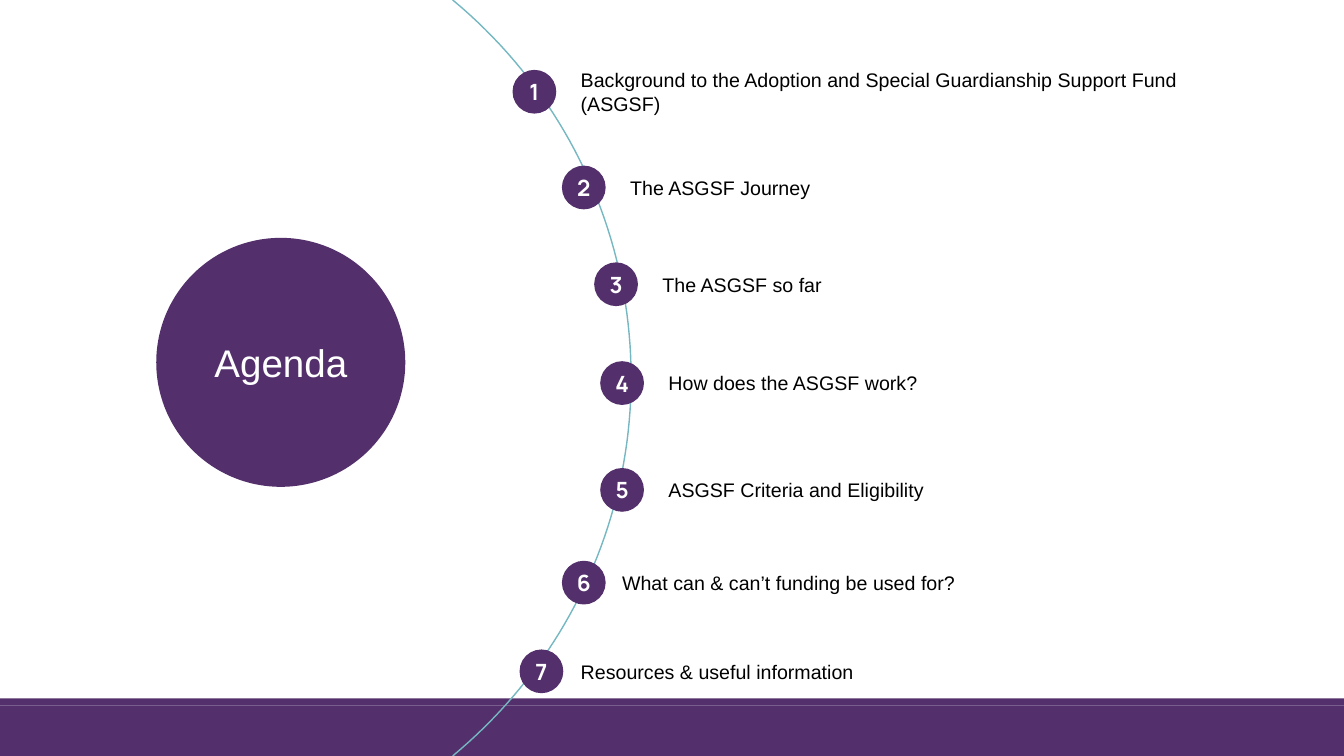
from lxml import etree
from pptx import Presentation
from pptx.dml.color import RGBColor
from pptx.enum.shapes import MSO_SHAPE
from pptx.enum.text import MSO_ANCHOR, PP_ALIGN
from pptx.oxml.ns import qn
from pptx.util import Inches, Pt

RECT, OVAL = MSO_SHAPE.RECTANGLE, MSO_SHAPE.OVAL
MIDDLE = MSO_ANCHOR.MIDDLE
LEFT, CENTER = PP_ALIGN.LEFT, PP_ALIGN.CENTER
PURPLE = RGBColor(0x53, 0x2F, 0x6B)
TEAL = RGBColor(0x75, 0xB8, 0xC2)
WHITE = RGBColor(0xFF, 0xFF, 0xFF)
BLACK = RGBColor(0, 0, 0)

BADGE = 0.42
LINE_HEIGHT = 0.24
ARC = [(4.49, 0), (5.61, 0.93), (6.26, 2.3), (6.26, 3.75)]
ARC_STEPS = 40
SLIDE_HEIGHT = 7.5

# badge left, badge top, label left, label width, label lines, label
AGENDA = [
    (5.09, 0.7, 5.76, 6.63, 2,
     "Background to the Adoption and Special Guardianship Support Fund (ASGSF)"),
    (5.58, 1.65, 6.25, 6.1, 1, "The ASGSF Journey"),
    (5.9, 2.61, 6.57, 5.97, 1, "The ASGSF so far"),
    (5.96, 3.59, 6.63, 6.1, 1, "How does the ASGSF work?"),
    (5.96, 4.65, 6.63, 6.63, 1, "ASGSF Criteria and Eligibility"),
    (5.58, 5.57, 6.17, 6.63, 1, "What can & can’t funding be used for?"),
    (5.16, 6.45, 5.76, 6.63, 1, "Resources & useful information"),
]


def write(sp, text, font, size, color, align, bold=False, inset=0):
    tf = sp.text_frame
    tf.text = text
    tf.word_wrap = True
    tf.vertical_anchor = MIDDLE
    tf.margin_left = tf.margin_right = Inches(inset)
    tf.margin_top = tf.margin_bottom = Inches(inset)
    p = tf.paragraphs[0]
    p.alignment = align
    r = p.runs[0]
    r.font.name = font
    r.font.size = Pt(size)
    r.font.bold = bold
    r.font.color.rgb = color


def add_solid(s, kind, left, top, width, height):
    sp = s.shapes.add_shape(kind, Inches(left), Inches(top),
                            Inches(width), Inches(height))
    sp.shadow.inherit = False
    sp.fill.solid()
    sp.fill.fore_color.rgb = PURPLE
    sp.line.fill.background()
    return sp


def add_arc(s):
    upper = []
    for step in range(ARC_STEPS + 1):
        t = step / ARC_STEPS
        weights = ((1 - t) ** 3, 3 * t * (1 - t) ** 2, 3 * t * t * (1 - t), t ** 3)
        upper.append(tuple(sum(w * point[axis] for w, point in zip(weights, ARC))
                           for axis in (0, 1)))
    lower = [(x, SLIDE_HEIGHT - y) for x, y in reversed(upper[:-1])]
    points = [(Inches(x), Inches(y)) for x, y in upper + lower]
    builder = s.shapes.build_freeform(*points[0])
    builder.add_line_segments(points[1:], close=False)
    sp = builder.convert_to_shape()
    sp.shadow.inherit = False
    sp.fill.background()
    sp.line.color.rgb = TEAL
    sp.line.width = Pt(1)


def add_item(s, number, left, top, label_left, label_width, lines, label):
    badge = add_solid(s, OVAL, left, top, BADGE, BADGE)
    badge.line.color.rgb = PURPLE
    badge.line.width = Pt(1)
    write(badge, str(number), "Manrope", 16, WHITE, CENTER, bold=True)
    height = lines * LINE_HEIGHT
    box = s.shapes.add_textbox(Inches(label_left),
                               Inches(top + (BADGE - height) / 2),
                               Inches(label_width), Inches(height))
    write(box, label, "Arial", 14, BLACK, LEFT)


def add_title(s):
    circle = add_solid(s, OVAL, 1.55, 2.36, 2.47, 2.47)
    title = s.shapes.title
    title.left, title.top = circle.left, circle.top
    title.width, title.height = circle.width, circle.height
    write(title, "Agenda", "Arial", 27.5, WHITE, CENTER, inset=0.03)
    body = title.text_frame._txBody.find(qn("a:bodyPr"))
    for child in list(body):
        body.remove(child)
    etree.SubElement(body, qn("a:noAutofit"))
    circle._element.addnext(title._element)


def main():
    prs = Presentation()
    prs.slide_width = Inches(13.33)
    prs.slide_height = Inches(SLIDE_HEIGHT)
    s = prs.slides.add_slide(prs.slide_layouts[5])
    add_solid(s, RECT, 0, 7, 13.33, 0.5)
    add_solid(s, RECT, 0, 6.93, 13.33, 0.07)
    add_arc(s)
    for number, item in enumerate(AGENDA, 1):
        add_item(s, number, *item)
    add_title(s)
    prs.save("out.pptx")


if __name__ == "__main__":
    main()
